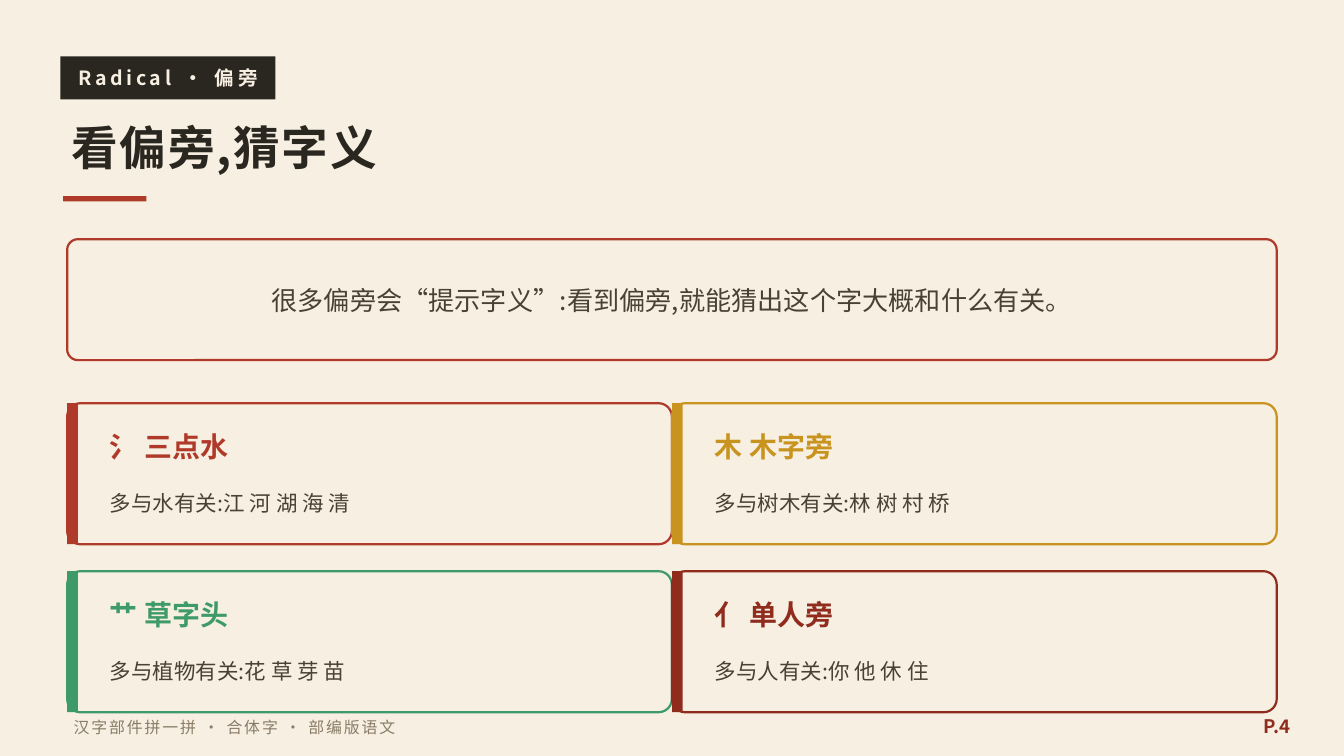
from lxml import etree
from pptx import Presentation, util as u
from pptx.dml.color import RGBColor
from pptx.enum import shapes, text
from pptx.oxml.ns import qn

FONT = "Noto Sans CJK SC"
COLORS = {
    "paper": "F6EFE2", "ink": "2A2620", "body": "4A4034", "muted": "8A7C68",
    "red": "B03A2A", "gold": "C8941F", "green": "3F9A6A", "maroon": "8F2C1D",
}
WIDTH = u.Inches(10)
HEIGHT = WIDTH * 9 // 16
CELL = WIDTH // 20  # the grid has 20 columns across the slide
MARGIN, CARD_COLS, CARD_ROWS, CARD_PITCH = 1, 9, 2.1, 2.5
CARDS_TOP = 6
CARDS = [
    ("氵 三点水", "多与水有关:江 河 湖 海 清", "red"),
    ("木 木字旁", "多与树木有关:林 树 村 桥", "gold"),
    ("艹 草字头", "多与植物有关:花 草 芽 苗", "green"),
    ("亻 单人旁", "多与人有关:你 他 休 住", "maroon"),
]


def color(name):
    return RGBColor.from_string(COLORS[name])


def write(frame, words, size, ink="body", bold=False, align="LEFT", spacing=0):
    """Put one formatted line, vertically centred, in a text frame."""
    frame.word_wrap = True
    frame.auto_size = text.MSO_AUTO_SIZE.NONE
    frame.vertical_anchor = text.MSO_ANCHOR.MIDDLE
    line = frame.paragraphs[0]
    line.alignment = getattr(text.PP_ALIGN, align)
    line.line_spacing = 1.0
    line.space_before = u.Pt(0)
    run = line.add_run()
    run.text = words
    font = run.font
    font.name, font.size, font.bold = FONT, u.Pt(size), bold
    font.color.rgb = color(ink)
    properties = run._r.get_or_add_rPr()
    etree.SubElement(properties, qn("a:ea"), typeface=FONT)
    if spacing:
        properties.set("spc", str(spacing * 100))


class Page:
    """Holds the current slide; places are (column, row, columns, rows)."""

    def __init__(self, deck):
        self.slide = deck.slides.add_slide(deck.slide_layouts[5])
        self.slide.background.fill.solid()
        self.slide.background.fill.fore_color.rgb = color("paper")

    def title(self, place, words, **style):
        holder = self.slide.shapes.title
        holder.left, holder.top, holder.width, holder.height = self.lengths(place)
        write(holder.text_frame, words, **style)

    def label(self, place, words, **style):
        box = self.slide.shapes.add_textbox(*self.lengths(place))
        write(box.text_frame, words, **style)

    def bar(self, place, fill):
        self.block(shapes.MSO_SHAPE.RECTANGLE, place, fill).line.fill.background()

    def panel(self, place, outline, rounding):
        panel = self.block(shapes.MSO_SHAPE.ROUNDED_RECTANGLE, place, "paper")
        panel.adjustments[0] = rounding
        panel.line.color.rgb = color(outline)
        panel.line.width = u.Pt(1.2)

    def card(self, column, row, heading, examples, accent):
        self.panel((column, row, CARD_COLS, CARD_ROWS), accent, 0.095)
        self.bar((column, row, 0.16, CARD_ROWS), accent)
        self.label((column + 0.44, row + 0.24, 8.2, 0.8), heading,
                   size=15, ink=accent, bold=True)
        self.label((column + 0.44, row + 1.04, 8.2, 0.9), examples, size=11.5)

    def block(self, kind, place, fill):
        block = self.slide.shapes.add_shape(kind, *self.lengths(place))
        block.shadow.inherit = False
        block.fill.solid()
        block.fill.fore_color.rgb = color(fill)
        return block

    @staticmethod
    def lengths(place):
        return [round(cells * CELL) for cells in place]


def main():
    deck = Presentation()
    deck.slide_width, deck.slide_height = WIDTH, HEIGHT
    page = Page(deck)

    page.bar((0.9, 0.84, 3.2, 0.64), "ink")
    page.label((0.9, 0.82, 3.2, 0.68), "Radical · 偏旁",
               size=10.5, ink="paper", bold=True, align="CENTER", spacing=2)
    page.title((0.86, 1.56, 18, 1.24), "看偏旁,猜字义",
               size=25, ink="ink", bold=True, spacing=1)
    page.bar((0.94, 2.92, 1.24, 0.08), "red")

    page.panel((MARGIN, 3.56, 2 * CARD_COLS, 1.8), "red", 0.089)
    page.label((MARGIN + 0.2, 3.56, 17.6, 1.8),
               "很多偏旁会“提示字义”:看到偏旁,就能猜出这个字大概和什么有关。",
               size=14, align="CENTER")

    for index, card in enumerate(CARDS):
        row, column = divmod(index, 2)
        page.card(MARGIN + column * CARD_COLS, CARDS_TOP + row * CARD_PITCH, *card)

    page.label((0.9, 10.52, 13, 0.6), "汉字部件拼一拼 · 合体字 · 部编版语文",
               size=8.5, ink="muted", spacing=1)
    page.label((18.2, 10.48, 1.2, 0.64), "P.4",
               size=10, ink="maroon", bold=True, align="RIGHT")
    deck.save("out.pptx")


if __name__ == "__main__":
    main()
